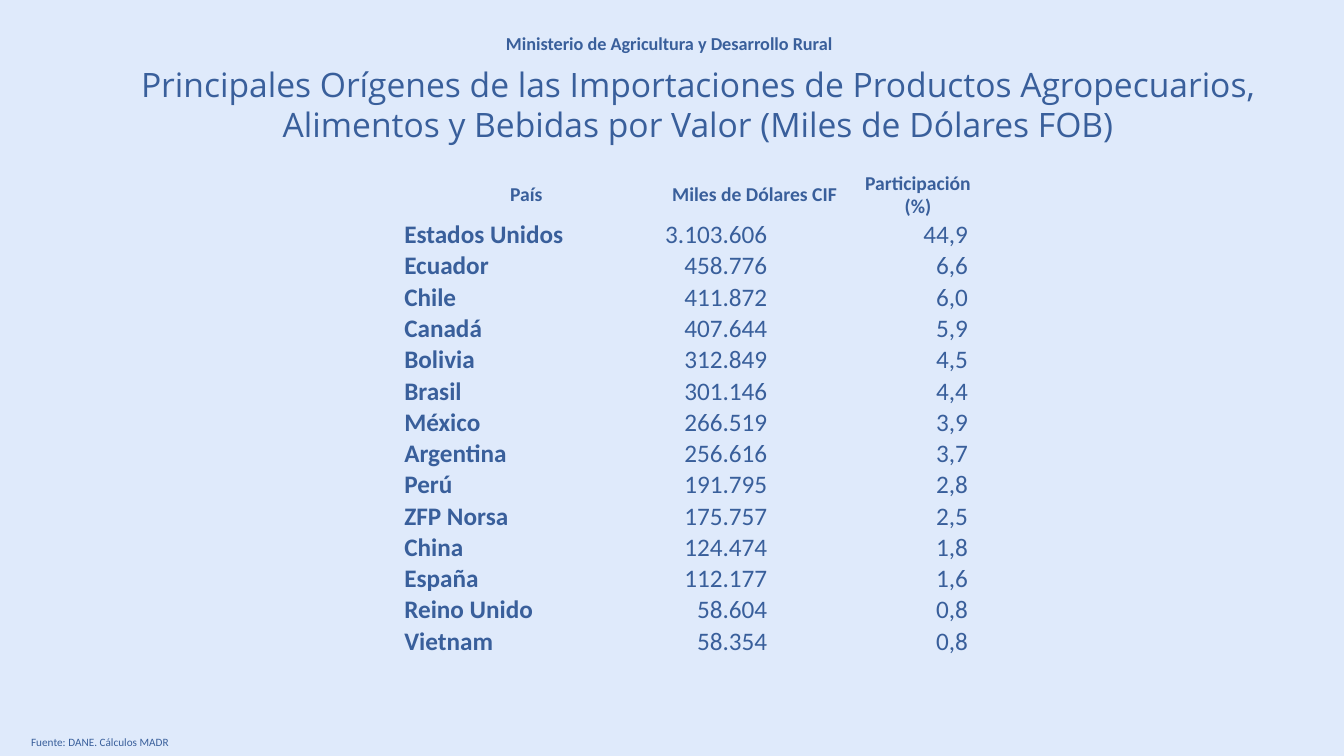
from pptx import Presentation
from pptx.dml.color import RGBColor
from pptx.enum.text import MSO_ANCHOR, MSO_AUTO_SIZE, PP_ALIGN
from pptx.util import Inches, Pt

NO_GRID_STYLE = "{2D5ABB26-0587-4C30-8999-92F81FD0307C}"

HEADERS = ["País", "Miles de Dólares CIF", "Participación (%)"]
IMPORTS = [
    ("Estados Unidos", "3.103.606", "44,9"),
    ("Ecuador", "458.776", "6,6"),
    ("Chile", "411.872", "6,0"),
    ("Canadá", "407.644", "5,9"),
    ("Bolivia", "312.849", "4,5"),
    ("Brasil", "301.146", "4,4"),
    ("México", "266.519", "3,9"),
    ("Argentina", "256.616", "3,7"),
    ("Perú", "191.795", "2,8"),
    ("ZFP Norsa", "175.757", "2,5"),
    ("China", "124.474", "1,8"),
    ("España", "112.177", "1,6"),
    ("Reino Unido", "58.604", "0,8"),
    ("Vietnam", "58.354", "0,8"),
]
COLUMN_WIDTHS = [2.44, 2.09, 1.15]
# Alignment, right margin and bold of each body column
COLUMN_STYLES = [
    (PP_ALIGN.LEFT, 0.01, True),
    (PP_ALIGN.RIGHT, 0.92, False),
    (PP_ALIGN.RIGHT, 0.08, False),
]


def color(hex_string):
    return RGBColor.from_string(hex_string)


class SlideBuilder:
    ink = "395F9B"
    paper = "DFEAFB"
    body_font = "Calibri"
    title_font = "Open Sans"

    def __init__(self, deck):
        self.slide = deck.slides.add_slide(deck.slide_layouts[5])
        background = self.slide.background.fill
        background.solid()
        background.fore_color.rgb = color(self.paper)

    def add_span(self, frame, text, size, align, bold=False, font=None):
        para = frame.paragraphs[0]
        para.alignment = align
        span = para.add_run()
        span.text = text
        span.font.name = font or self.body_font
        span.font.size = Pt(size)
        span.font.bold = bold
        span.font.color.rgb = color(self.ink)

    def title(self, text, left, top, width, height):
        box = self.slide.shapes.title
        box.left, box.top = Inches(left), Inches(top)
        box.width, box.height = Inches(width), Inches(height)
        frame = box.text_frame
        frame.word_wrap = True
        frame.auto_size = MSO_AUTO_SIZE.SHAPE_TO_FIT_TEXT
        frame.vertical_anchor = MSO_ANCHOR.TOP
        self.add_span(frame, text, 24, PP_ALIGN.CENTER, font=self.title_font)

    def text(self, text, left, top, width, height, size, align, bold=False, wrap=True):
        box = self.slide.shapes.add_textbox(
            Inches(left), Inches(top), Inches(width), Inches(height))
        frame = box.text_frame
        frame.word_wrap = wrap
        frame.auto_size = MSO_AUTO_SIZE.SHAPE_TO_FIT_TEXT
        self.add_span(frame, text, size, align, bold)

    def cell(self, cell, text, size, align, right, bold, anchor):
        cell.fill.background()
        cell.vertical_anchor = anchor
        cell.margin_left = cell.margin_top = Inches(0.01)
        cell.margin_right, cell.margin_bottom = Inches(right), 0
        self.add_span(cell.text_frame, text, size, align, bold)

    def table(self, headers, rows, left, top, header_height, row_height):
        height = header_height + row_height * len(rows)
        frame = self.slide.shapes.add_table(
            len(rows) + 1, len(headers), Inches(left), Inches(top),
            Inches(sum(COLUMN_WIDTHS)), Inches(height))
        table = frame.table
        table.first_row = table.horz_banding = False
        table._tbl.tblPr.find("{*}tableStyleId").text = NO_GRID_STYLE
        for column, width in zip(table.columns, COLUMN_WIDTHS):
            column.width = Inches(width)
        for index, row in enumerate(table.rows):
            row.height = Inches(row_height if index else header_height)
        for index, header in enumerate(headers):
            self.cell(table.cell(0, index), header, 14, PP_ALIGN.CENTER,
                      0.01, True, MSO_ANCHOR.MIDDLE)
        for row_index, values in enumerate(rows, start=1):
            for index, (value, style) in enumerate(zip(values, COLUMN_STYLES)):
                align, right, bold = style
                self.cell(table.cell(row_index, index), value, 18, align,
                          right, bold, MSO_ANCHOR.BOTTOM)


def main():
    deck = Presentation()
    deck.slide_width, deck.slide_height = Inches(13.33), Inches(7.5)
    page = SlideBuilder(deck)

    # Heading
    page.text("Ministerio de Agricultura y Desarrollo Rural",
              4.92, 0.27, 3.49, 0.32, 13, PP_ALIGN.LEFT, bold=True, wrap=False)
    page.title("Principales Orígenes de las Importaciones de Productos Agropecuarios, "
               "Alimentos y Bebidas por Valor (Miles de Dólares FOB)",
               0.63, 0.58, 12.59, 0.91)

    # Imports by country
    page.table(HEADERS, IMPORTS, 4, 1.69, 0.48, 0.31)

    # Source line
    page.text("Fuente: DANE. Cálculos MADR",
              0.21, 7.25, 12.91, 0.24, 8, PP_ALIGN.JUSTIFY)

    deck.save("out.pptx")


if __name__ == "__main__":
    main()
